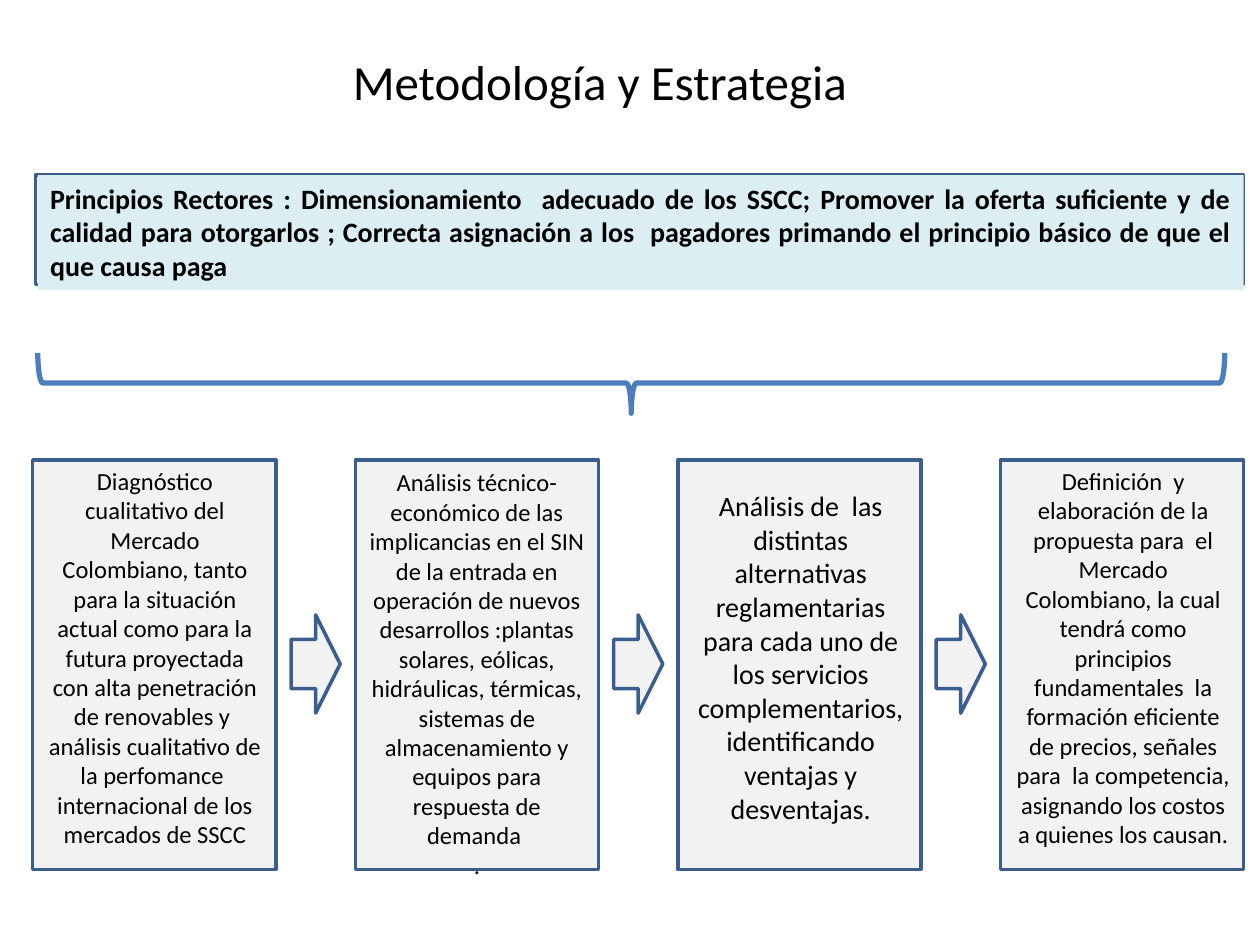
"""Build the methodology and strategy slide with its four stages."""
from dataclasses import dataclass

from pptx import Presentation
from pptx.dml.color import RGBColor
from pptx.enum import shapes, text
from pptx.util import Pt

BLACK = RGBColor(0x00, 0x00, 0x00)
GREY = RGBColor(0xF2, 0xF2, 0xF2)
PALE_BLUE = RGBColor(0xDB, 0xEE, 0xF4)
DARK_BLUE = RGBColor(0x3A, 0x5F, 0x8C)
BRACE_BLUE = RGBColor(0x4B, 0x7E, 0xBC)
STAGE_PITCH = 184.32


@dataclass(frozen=True)
class Box:
    left: float
    top: float
    width: float
    height: float

    def lengths(self) -> tuple:
        return Pt(self.left), Pt(self.top), Pt(self.width), Pt(self.height)


@dataclass(frozen=True)
class Stage:
    wording: str
    box: Box
    size: int = 14


STAGES = (
    Stage("Diagnóstico cualitativo del Mercado Colombiano, tanto para la situación "
          "actual como para la futura proyectada con alta penetración de renovables y  "
          "análisis cualitativo de la perfomance  internacional de los mercados de SSCC",
          Box(18.72, 262.8, 139.68, 227.52)),
    Stage("Análisis técnico-económico de las implicancias en el SIN de la entrada en "
          "operación de nuevos desarrollos :plantas solares, eólicas, hidráulicas, "
          "térmicas, sistemas de almacenamiento y equipos para respuesta de demanda \n.",
          Box(203.04, 263.52, 138.96, 244.8)),
    Stage("Análisis de  las distintas alternativas reglamentarias para cada uno de los "
          "servicios complementarios, identificando ventajas y desventajas.",
          Box(388.8, 275.76, 137.52, 200.88), 16),
    Stage("Definición  y elaboración de la propuesta para  el Mercado Colombiano, la "
          "cual tendrá como principios fundamentales  la formación eficiente de precios, "
          "señales para  la competencia, asignando los costos a quienes los causan. ",
          Box(573.12, 262.8, 137.52, 249.84)),
)
PRINCIPLES = (
    "Principios Rectores : Dimensionamiento  adecuado de los SSCC; Promover la oferta "
    "suficiente y de calidad para otorgarlos ; Correcta asignación a los  pagadores "
    "primando el principio básico de que el que causa paga"
)


def write_text(shape, wording: str, *, size: int, align: text.PP_ALIGN,
               bold: bool = False) -> None:
    frame = shape.text_frame
    frame.text = wording
    frame.word_wrap = True
    frame.auto_size = text.MSO_AUTO_SIZE.SHAPE_TO_FIT_TEXT
    frame.vertical_anchor = text.MSO_ANCHOR.TOP
    for paragraph in frame.paragraphs:
        paragraph.alignment = align
        font = paragraph.runs[0].font
        font.name, font.size, font.bold = "Calibri", Pt(size), bold
        font.color.rgb = BLACK


def add_preset(slide, kind: shapes.MSO_SHAPE, box: Box, *,
               fill: RGBColor | None = None, line: RGBColor | None = DARK_BLUE,
               weight: float = 2):
    shape = slide.shapes.add_shape(kind, *box.lengths())
    shape.shadow.inherit = False
    if fill is None:
        shape.fill.background()
    else:
        shape.fill.solid()
        shape.fill.fore_color.rgb = fill
    if line is None:
        shape.line.fill.background()
    else:
        shape.line.color.rgb = line
        shape.line.width = Pt(weight)
    return shape


def add_principles(slide) -> None:
    rectangle = shapes.MSO_SHAPE.RECTANGLE
    add_preset(slide, rectangle, Box(20.16, 100.08, 690.48, 62.64))
    banner = add_preset(slide, rectangle, Box(21.6, 100.08, 689.04, 65.52),
                        fill=PALE_BLUE, line=None)
    write_text(banner, PRINCIPLES, size=16, align=text.PP_ALIGN.JUSTIFY, bold=True)
    brace = add_preset(slide, shapes.MSO_SHAPE.LEFT_BRACE,
                       Box(343.44, -120.24, 34.56, 678.24), line=BRACE_BLUE, weight=3)
    brace.rotation = 270


def add_stage(slide, index: int, stage: Stage) -> None:
    offset = index * STAGE_PITCH
    add_preset(slide, shapes.MSO_SHAPE.RECTANGLE,
               Box(18.72 + offset, 262.8, 138.96, 234), fill=GREY)
    if index < len(STAGES) - 1:
        add_preset(slide, shapes.MSO_SHAPE.RIGHT_ARROW,
                   Box(166.32 + offset, 351.36, 28.08, 56.16), fill=GREY)
    label = slide.shapes.add_textbox(*stage.box.lengths())
    write_text(label, stage.wording, size=stage.size, align=text.PP_ALIGN.CENTER)


def main() -> None:
    presentation = Presentation()
    presentation.slide_width, presentation.slide_height = Pt(720), Pt(540)
    slide = presentation.slides.add_slide(presentation.slide_layouts[5])
    title = slide.shapes.title
    title.left, title.top, title.width, title.height = Box(
        194.4, 25.92, 340.56, 41.04).lengths()
    write_text(title, "Metodología y Estrategia", size=28, align=text.PP_ALIGN.LEFT)
    add_principles(slide)
    for index, stage in enumerate(STAGES):
        add_stage(slide, index, stage)
    presentation.save("out.pptx")


if __name__ == "__main__":
    main()
